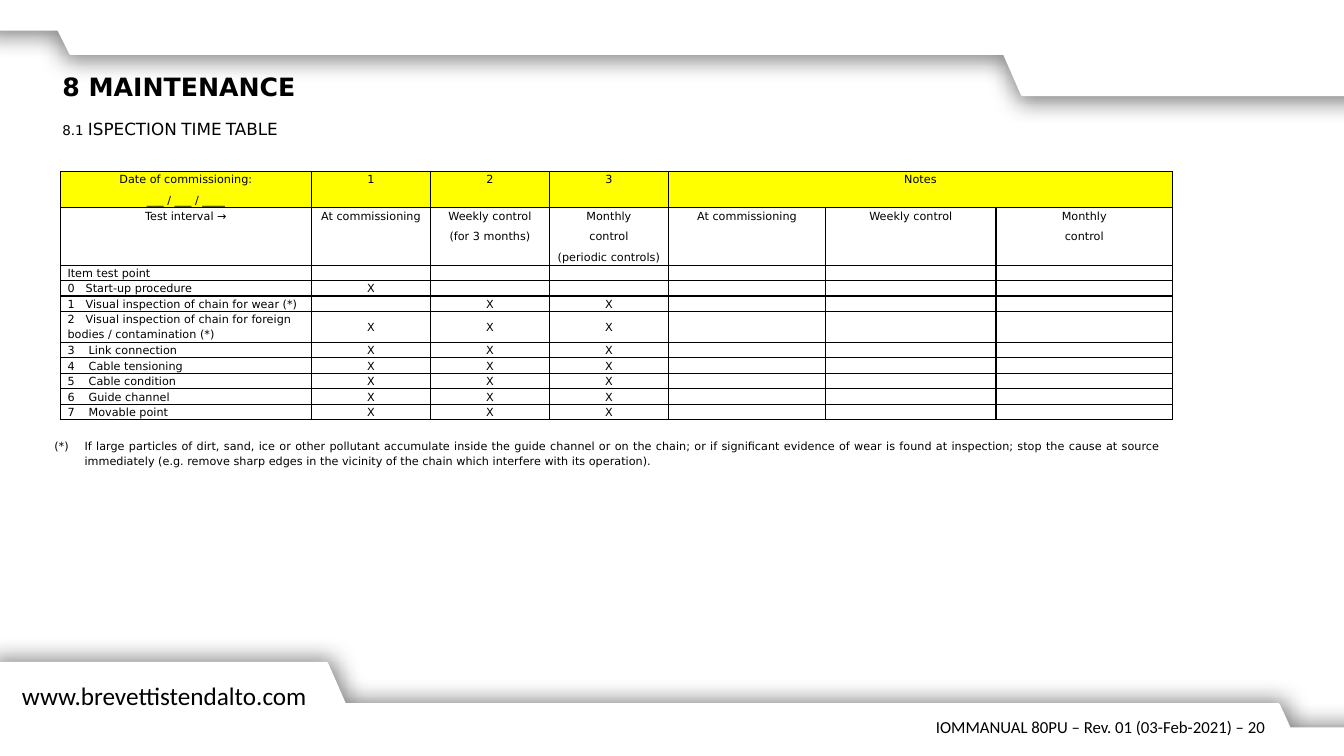
import lxml.etree
import pptx
import pptx.dml.color
import pptx.enum.text
import pptx.oxml.ns
import pptx.util

PX = 9144  # 100 px to the inch
BLACK = pptx.dml.color.RGBColor(0x00, 0x00, 0x00)
WHITE = pptx.dml.color.RGBColor(0xFF, 0xFF, 0xFF)
YELLOW = pptx.dml.color.RGBColor(0xFF, 0xFF, 0x00)
ALIGN = pptx.enum.text.PP_ALIGN
ANCHOR = pptx.enum.text.MSO_ANCHOR
qn = pptx.oxml.ns.qn
Pt = pptx.util.Pt


def child(parent, tag, **attrs):
    el = lxml.etree.SubElement(parent, qn(tag))
    for name, value in attrs.items():
        el.set(name, str(value))
    return el


class Page:
    font = "DejaVu Sans"
    small = 8
    line_spacing = 1.15
    space_after = 4

    def __init__(self, prs):
        self.s = prs.slides.add_slide(prs.slide_layouts[6])

    def band(self, points, angle):
        """White band with a soft shadow cast towards angle (degrees)."""
        fb = self.s.shapes.build_freeform(*points[0], scale=PX)
        fb.add_line_segments(points[1:], close=True)
        sp = fb.convert_to_shape()
        sp.fill.solid()
        sp.fill.fore_color.rgb = WHITE
        sp.line.color.rgb = WHITE
        sp.line.width = Pt(2)
        sp.shadow.inherit = False
        effects = sp._element.spPr.find(qn("a:effectLst"))
        shadow = child(effects, "a:outerShdw", blurRad=Pt(16), dist=Pt(4),
                       dir=angle * 60000, algn="ctr", rotWithShape=0)
        color = child(shadow, "a:srgbClr", val=BLACK)
        child(color, "a:alpha", val=48000)

    def style(self, p, size, font=None, bold=False, align=None):
        p.alignment = align
        p.font.size = Pt(size)
        p.font.name = font or self.font
        p.font.bold = bold
        p.font.color.rgb = BLACK

    def spacing(self, p, tab=None):
        p.line_spacing = self.line_spacing
        p.space_after = Pt(self.space_after)
        if tab:
            tabs = child(p._p.get_or_add_pPr(), "a:tabLst")
            child(tabs, "a:tab", pos=tab * PX, algn="l")

    def text(self, x, y, w, h, text, size, hang=None, small_caps=False, **style):
        tb = self.s.shapes.add_textbox(x * PX, y * PX, w * PX, h * PX)
        tf = tb.text_frame
        tf.word_wrap = True
        tf.auto_size = pptx.enum.text.MSO_AUTO_SIZE.SHAPE_TO_FIT_TEXT
        p = tf.paragraphs[0]
        r = p.add_run()
        r.text = text
        if small_caps:
            r._r.get_or_add_rPr().set("cap", "small")
        if hang:
            self.spacing(p, hang)
            pPr = p._p.get_or_add_pPr()
            pPr.set("marL", str(hang * PX))
            pPr.set("indent", str(-hang * PX))
        self.style(p, size, **style)

    def cell(self, cell, text, fill, align, tab=None):
        cell.margin_left = cell.margin_right = 7 * PX
        cell.margin_top = cell.margin_bottom = 0
        tcPr = cell._tc.get_or_add_tcPr()
        for side in ("a:lnL", "a:lnR", "a:lnT", "a:lnB"):
            ln = child(tcPr, side, w=Pt(1))
            child(child(ln, "a:solidFill"), "a:srgbClr", val=BLACK)
        cell.fill.solid()
        cell.fill.fore_color.rgb = fill
        cell.text_frame.text = text
        for p in cell.text_frame.paragraphs:
            self.spacing(p, tab)
            self.style(p, self.small, align=align)
            if not p.runs:  # keeps empty rows low
                child(p._p, "a:endParaRPr", sz=self.small * 100)

    def table(self, x, y, cols, heights, rows, tabs):
        t = self.s.shapes.add_table(len(rows), len(cols), x * PX, y * PX,
                                    sum(cols) * PX, sum(heights) * PX).table
        t.first_row = t.horz_banding = False
        for column, w in zip(t.columns, cols):
            column.width = w * PX
        for i, (row, h) in enumerate(zip(rows, heights)):
            t.rows[i].height = h * PX
            for j, text in enumerate(row):
                label = j == 0 and i > 1
                self.cell(t.cell(i, j), text, YELLOW if i == 0 else WHITE,
                          ALIGN.LEFT if label else ALIGN.CENTER,
                          tabs[i] if label else None)
        return t


# Bands at the top and bottom edges
TOP_BAND = [(-12, 29), (58, 29), (70, 53), (996, 53), (1014, 94),
            (1350, 94), (1350, -10), (-12, -10)]
BOTTOM_BAND = [(1350, 723), (1279, 723), (1268, 699), (342, 699), (324, 658),
               (-12, 658), (-12, 763), (1350, 763)]

# Inspection plan: item and its marks for the three intervals
COLS = [249, 118, 118, 118, 156, 169, 175]
HEADERS = [
    ["Date of commissioning:\n___ / ___ / ____", "1", "2", "3", "Notes", "", ""],
    ["Test interval →", "At commissioning", "Weekly control\n(for 3 months)",
     "Monthly\ncontrol\n(periodic controls)", "At commissioning",
     "Weekly control", "Monthly\ncontrol"],
]
ITEMS = [
    ("Item test point", "", "", ""),
    ("0\tStart-up procedure", "X", "", ""),
    ("1\tVisual inspection of chain for wear (*)", "", "X", "X"),
    ("2\tVisual inspection of chain for foreign bodies / contamination (*)",
     "X", "X", "X"),
] + [(f"{n}\t{name}", "X", "X", "X") for n, name in enumerate(
    ["Link connection", "Cable tensioning", "Cable condition",
     "Guide channel", "Movable point"], 3)]
TALL_ROW = 5


def main():
    prs = pptx.Presentation()
    prs.slide_width, prs.slide_height = 1333 * PX, 750 * PX
    page = Page(prs)

    # Frame
    page.band(BOTTOM_BAND, 303)
    page.band(TOP_BAND, 123)
    page.text(12, 670, 307, 40, "www.brevettistendalto.com", 18, font="Calibri")

    # Headings
    page.text(52, 66, 606, 40, "8 MAINTENANCE", 18, bold=True)
    page.text(52, 113, 533, 30, "8.1 ISPECTION TIME TABLE", 12, small_caps=True)

    # Inspection table
    rows = HEADERS + [[*item, "", "", ""] for item in ITEMS]
    heights = [35, 56] + [14] * len(ITEMS)
    heights[TALL_ROW] = 29
    tabs = [None] * 3 + [18] * 3 + [21] * 5
    t = page.table(60, 170, COLS, heights, rows, tabs)
    t.cell(0, 4).merge(t.cell(0, 6))
    for j in range(1, 4):
        t.cell(TALL_ROW, j).vertical_anchor = ANCHOR.MIDDLE

    # Footnote and page footer
    page.text(44, 429, 1118, 78,
              "(*)\tIf large particles of dirt, sand, ice or other pollutant "
              "accumulate inside the guide channel or on the chain; or if "
              "significant evidence of wear is found at inspection; stop the "
              "cause at source immediately (e.g. remove sharp edges in the "
              "vicinity of the chain which interfere with its operation).",
              8, hang=30, align=ALIGN.JUSTIFY)
    page.text(879, 706, 386, 30, "IOMMANUAL 80PU – Rev. 01 (03-Feb-2021) – 20",
              12, font="Calibri", align=ALIGN.RIGHT)

    prs.save("out.pptx")


if __name__ == "__main__":
    main()
